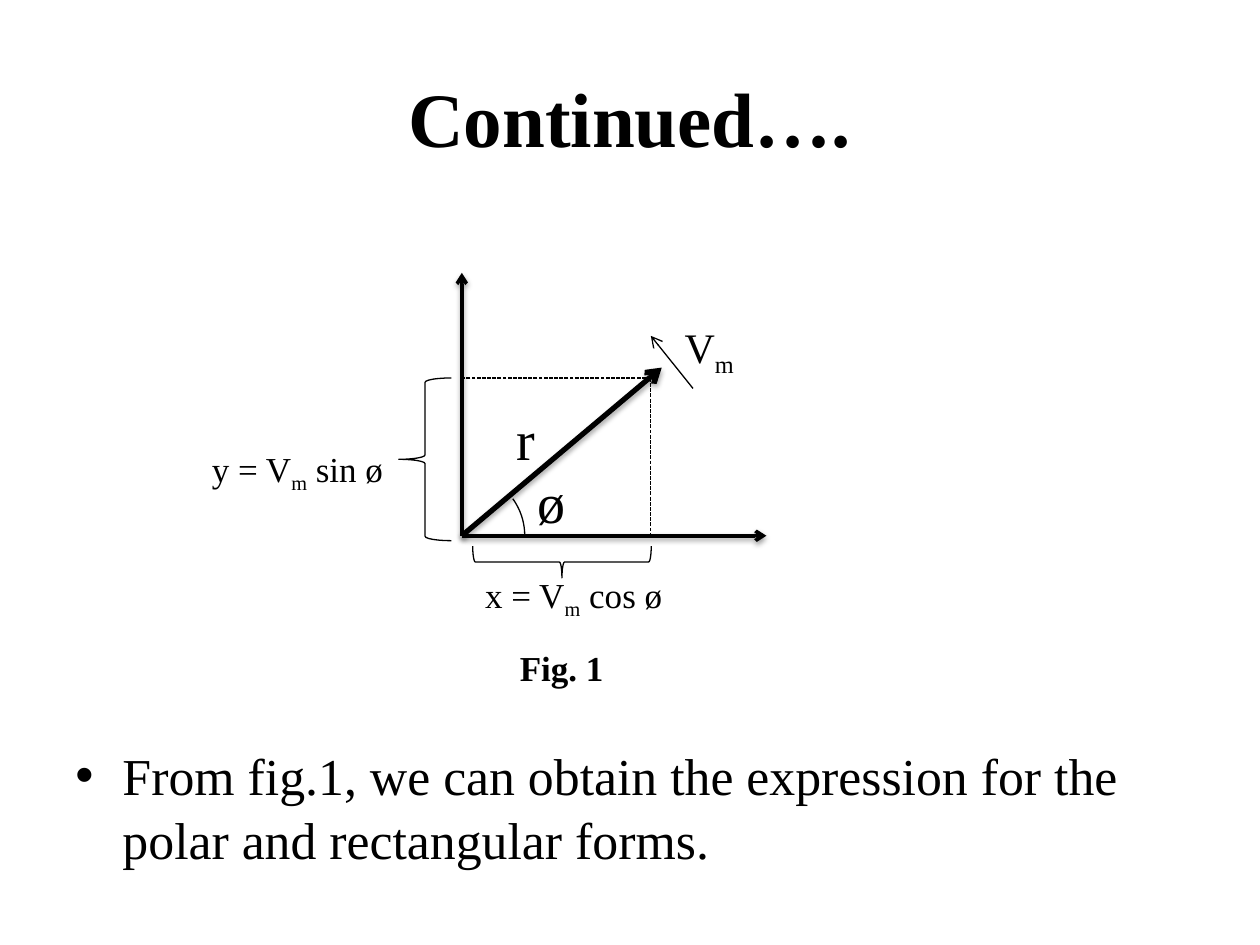
from dataclasses import dataclass

import pptx
import pptx.dml.color
import pptx.enum.dml
import pptx.enum.shapes
import pptx.enum.text
import pptx.oxml
import pptx.oxml.ns
import pptx.util
from pptx.util import Cm, Pt

BLACK = pptx.dml.color.RGBColor(0x00, 0x00, 0x00)
FONT = "Times New Roman"
ALIGN = pptx.enum.text.PP_ALIGN
ANCHOR = pptx.enum.text.MSO_ANCHOR
SHAPE = pptx.enum.shapes.MSO_SHAPE
NS = pptx.oxml.ns.nsdecls("a")

# Diagram coordinates in cm
ORIGIN_X, ORIGIN_Y = 9.31, 10.8
TIP_X, TIP_Y = 13.12, 7.62


@dataclass
class Line:
    start: tuple[float, float]
    end: tuple[float, float]
    width: float = 0.75
    arrow: bool = False
    dashed: bool = False
    shadow_alpha: int = 0
    shadow_dist: float = 0


@dataclass
class Label:
    """Text in a box; every second part, split at "_", is a subscript."""
    text: str
    box: tuple[float, float, float, float]
    size: float
    bold: bool = False
    align: ALIGN = ALIGN.LEFT
    anchor: ANCHOR = ANCHOR.TOP


@dataclass
class Outline:
    kind: SHAPE
    box: tuple[float, float, float, float]
    rotation: float = 0
    flipped: bool = False
    adjustments: tuple[float, ...] = ()


LINES = [
    Line((ORIGIN_X, ORIGIN_Y), (ORIGIN_X, 5.5), 2, True, False, 38, 1.6),
    Line((ORIGIN_X, ORIGIN_Y), (15.45, ORIGIN_Y), 2, True, False, 38, 1.6),
    Line((ORIGIN_X, ORIGIN_Y), (13.34, 7.41), 3, True, False, 35, 1.8),
    Line((TIP_X, TIP_Y), (TIP_X, ORIGIN_Y), dashed=True),
    Line((TIP_X, TIP_Y), (ORIGIN_X, TIP_Y), dashed=True),
    Line((13.97, 7.83), (TIP_X, 6.77), arrow=True),
]

OUTLINES = [
    Outline(SHAPE.ARC, (8.04, 9.53, 2.54, 2.54), adjustments=(194.451, 0)),
    Outline(SHAPE.LEFT_BRACE, (8.04, TIP_Y, 1.06, 3.28)),
    Outline(SHAPE.RIGHT_BRACE, (11.01, 9.53, 0.64, 3.6), 270, True),
]

TITLE = Label("Continued….", (1.27, 0.76, 22.86, 3.18), 44, True,
              ALIGN.CENTER, ANCHOR.MIDDLE)
BODY = Label("From fig.1, we can obtain the expression for the polar and "
             "rectangular forms.", (1.27, 14.81, 22.86, 2.67), 29.6)
LABELS = [
    Label("ø", (10.58, 9.31, 0.85, 1.63), 32),
    Label("r", (10.16, 8.04, 1.06, 1.63), 32),
    Label("V_m", (13.55, 6.35, 2.33, 1.27), 24),
    Label("y = V_m_ sin ø", (4.02, 8.89, 4.23, 1.12), 20),
    Label("x = V_m_ cos ø", (9.53, 11.43, 4.45, 1.12), 20),
    Label("Fig. 1", (9.95, 12.91, 2.75, 1.12), 20, True, ALIGN.CENTER),
]


def add_line(s, line: Line):
    cx = s.shapes.add_connector(
        pptx.enum.shapes.MSO_CONNECTOR.STRAIGHT,
        *(Cm(v) for v in line.start + line.end))
    cx.line.color.rgb = BLACK
    cx.line.width = Pt(line.width)
    if line.dashed:
        cx.line.dash_style = pptx.enum.dml.MSO_LINE.SQUARE_DOT
    if line.arrow:
        cx.get_or_add_ln().append(
            pptx.oxml.parse_xml(f'<a:tailEnd {NS} type="arrow"/>'))
    shadow = ""
    if line.shadow_alpha:
        shadow = (f'<a:outerShdw blurRad="{Pt(3.1)}" '
                  f'dist="{Pt(line.shadow_dist)}" dir="5400000" rotWithShape="0">'
                  f'<a:srgbClr val="{BLACK}">'
                  f'<a:alpha val="{line.shadow_alpha * 1000}"/>'
                  '</a:srgbClr></a:outerShdw>')
    cx.element.spPr.append(
        pptx.oxml.parse_xml(f"<a:effectLst {NS}>{shadow}</a:effectLst>"))


def add_outline(s, outline: Outline):
    sp = s.shapes.add_shape(outline.kind, *(Cm(v) for v in outline.box))
    sp.shadow.inherit = False
    sp.fill.background()
    sp.line.color.rgb = BLACK
    sp.line.width = Pt(0.75)
    sp.rotation = outline.rotation
    for i, value in enumerate(outline.adjustments):
        sp.adjustments[i] = value
    if outline.flipped:
        sp.element.spPr.get_or_add_xfrm().set("flipH", "1")


def add_label(s, label: Label):
    """Add the label and return its paragraph."""
    tf = s.shapes.add_textbox(*(Cm(v) for v in label.box)).text_frame
    tf.word_wrap = True
    tf.vertical_anchor = label.anchor
    p = tf.paragraphs[0]
    p.alignment = label.align
    for i, part in enumerate(label.text.split("_")):
        r = p.add_run()
        r.text = part
        r.font.name = FONT
        r.font.size = Pt(label.size)
        r.font.bold = label.bold
        r.font.color.rgb = BLACK
        if i % 2:
            r._r.get_or_add_rPr().set("baseline", "-25000")
    return p


def add_bullet(p):
    p.line_spacing = 1.04
    pPr = p._p.get_or_add_pPr()
    pPr.set("marL", str(Cm(0.95)))
    pPr.set("indent", str(Cm(-0.95)))
    pPr.append(pptx.oxml.parse_xml(f'<a:buFont {NS} typeface="Arial"/>'))
    pPr.append(pptx.oxml.parse_xml(f'<a:buChar {NS} char="•"/>'))


def main():
    prs = pptx.Presentation()
    prs.slide_width, prs.slide_height = Cm(25.4), Cm(19.05)
    s = prs.slides.add_slide(prs.slide_layouts[6])
    add_label(s, TITLE)
    add_bullet(add_label(s, BODY))
    for line in LINES:
        add_line(s, line)
    for outline in OUTLINES:
        add_outline(s, outline)
    for label in LABELS:
        add_label(s, label)
    prs.save("out.pptx")


if __name__ == "__main__":
    main()
